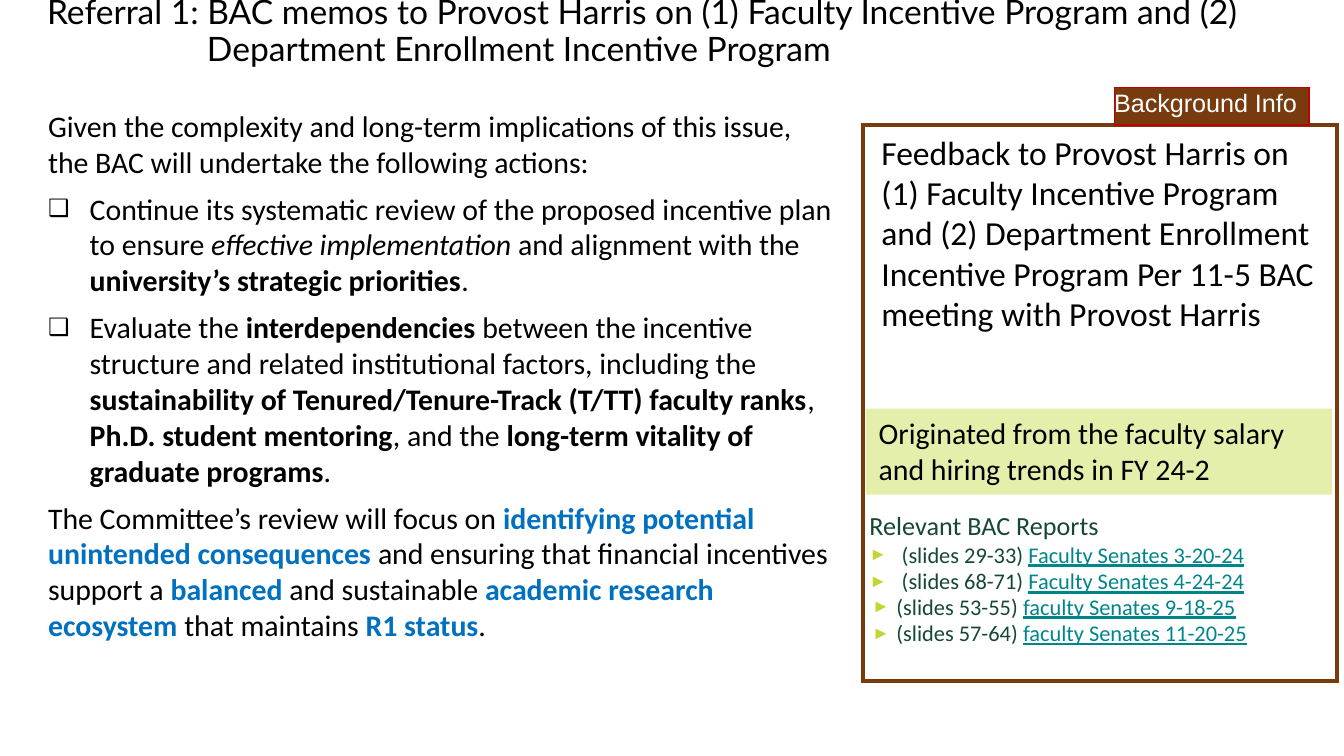
from dataclasses import dataclass, field
from typing import Any, Optional

from lxml import etree
from pptx import Presentation
from pptx.dml.color import RGBColor
from pptx.enum.shapes import MSO_SHAPE
from pptx.enum.text import MSO_ANCHOR, MSO_AUTO_SIZE, PP_ALIGN
from pptx.oxml.ns import qn
from pptx.util import Inches, Pt

RECTANGLE = MSO_SHAPE.RECTANGLE
TOP, MIDDLE = MSO_ANCHOR.TOP, MSO_ANCHOR.MIDDLE
LEFT = PP_ALIGN.LEFT
NO_AUTOFIT = MSO_AUTO_SIZE.NONE

BLACK, WHITE, BROWN, RED = "000000", "FFFFFF", "783B0D", "C00000"
GREEN, LIME, PALE_LIME = "154734", "BFD730", "E5EFAC"
TEAL, BLUE = "00858A", "0070C0"

DEFAULT_INSETS = (0.1, 0.05, 0.1, 0.05)
NO_INSETS = (0, 0, 0, 0)


@dataclass
class Span:
    text: str
    size: float = 16
    color: str = BLACK
    font: str = "Calibri"
    format: dict[str, Any] = field(default_factory=dict)


@dataclass
class Line:
    spans: list[Span]
    margin: float = 0
    indent: float = 0
    bullet: str = ""
    bullet_color: Optional[str] = None
    format: dict[str, Any] = field(default_factory=dict)


@dataclass
class Box:
    left: float
    top: float
    width: float
    height: float
    lines: list[Line] = field(default_factory=list)
    insets: tuple[float, float, float, float] = DEFAULT_INSETS
    anchor: MSO_ANCHOR = TOP
    fill: Optional[str] = None
    border: Optional[str] = None
    border_width: float = 0


def rgb(color: str) -> RGBColor:
    return RGBColor.from_string(color)


def bold(text: str, color: str = BLACK) -> Span:
    return Span(text, color=color, format={"bold": True})


def add_bullet(paragraph, line: Line) -> None:
    properties = paragraph._p.get_or_add_pPr()
    if line.bullet_color:
        color = etree.SubElement(properties, qn("a:buClr"))
        etree.SubElement(color, qn("a:srgbClr"), val=line.bullet_color)
    etree.SubElement(properties, qn("a:buSzPct"), val="80000")
    etree.SubElement(properties, qn("a:buFont"), typeface="Arial")
    etree.SubElement(properties, qn("a:buChar"), char=line.bullet)


def write_line(paragraph, line: Line) -> None:
    for name, value in ({"alignment": LEFT} | line.format).items():
        setattr(paragraph, name, value)
    properties = paragraph._p.get_or_add_pPr()
    properties.set("marL", str(Inches(line.margin)))
    properties.set("indent", str(Inches(line.indent)))
    if line.bullet:
        add_bullet(paragraph, line)
    for span in line.spans:
        run = paragraph.add_run()
        run.text = span.text
        run.font.color.rgb = rgb(span.color)
        settings = {"size": Pt(span.size), "name": span.font} | span.format
        for name, value in settings.items():
            setattr(run.font, name, value)


def write_text(shape, box: Box) -> None:
    frame = shape.text_frame
    left, top, right, bottom = map(Inches, box.insets)
    settings = {
        "word_wrap": True, "auto_size": NO_AUTOFIT, "vertical_anchor": box.anchor,
        "margin_left": left, "margin_top": top,
        "margin_right": right, "margin_bottom": bottom,
    }
    for name, value in settings.items():
        setattr(frame, name, value)
    for index, line in enumerate(box.lines):
        write_line(frame.add_paragraph() if index else frame.paragraphs[0], line)


def bounds(box: Box) -> list[int]:
    return [Inches(value) for value in (box.left, box.top, box.width, box.height)]


def add_text_box(slide, box: Box) -> None:
    write_text(slide.shapes.add_textbox(*bounds(box)), box)


def add_panel(slide, box: Box) -> None:
    shape = slide.shapes.add_shape(RECTANGLE, *bounds(box))
    shape.shadow.inherit = False
    if box.fill:
        shape.fill.solid()
        shape.fill.fore_color.rgb = rgb(box.fill)
    else:
        shape.fill.background()
    if box.border:
        shape.line.color.rgb = rgb(box.border)
        shape.line.width = Pt(box.border_width)
        outline = shape._element.spPr.find(qn("a:ln"))
        etree.SubElement(outline, qn("a:miter"), lim="800000")
    else:
        shape.line.fill.background()
    if box.lines:
        write_text(shape, box)


def place_title(slide, box: Box) -> None:
    """Fill the title, ending it with a line break as tall as its text."""
    title = slide.shapes.title
    title.left, title.top, title.width, title.height = bounds(box)
    write_text(title, box)
    paragraph = title.text_frame.paragraphs[0]
    paragraph.add_line_break()
    size = str(box.lines[0].spans[0].size * 100)
    line_break = paragraph._p.find(qn("a:br"))
    for parent, tag in ((line_break, "a:rPr"), (paragraph._p, "a:endParaRPr")):
        properties = etree.SubElement(parent, qn(tag), sz=size)
        etree.SubElement(properties, qn("a:latin"), typeface="Lato")


def report(slides: str, name: str, margin: float, indent: float) -> Line:
    spans = [Span(f"(slides {slides}) ", 12, GREEN),
             Span(name, 12, TEAL, format={"underline": True})]
    return Line(spans, margin, indent, "►", LIME)


def action(*spans: Span) -> Line:
    return Line(list(spans), 0.31, -0.31, "❑", format={"space_before": Pt(6)})


TITLE = Box(0.35, 0.11, 9.39, 0.56, [Line(
    [Span("Referral 1: BAC memos to Provost Harris on (1) Faculty Incentive Program "
          "and (2) Department Enrollment Incentive Program", 18, font="Lato")],
    1.19, -1.19, format={"line_spacing": 0.9})], NO_INSETS, MIDDLE)

FRAME = Box(6.42, 0.93, 3.53, 4.14, border=BROWN, border_width=2.25)
TAB = Box(8.29, 0.65, 1.45, 0.28,
          [Line([Span("Background Info", 13.5, WHITE, "Arial")])],
          (0, 0, 0, 0.05), fill=BROWN, border=RED, border_width=0.75)
ORIGIN = Box(6.44, 3.04, 3.47, 0.64, [Line([Span(
    "Originated from the faculty salary and hiring trends in FY 24-2")])],
    fill=PALE_LIME)

FEEDBACK = Box(6.46, 0.93, 3.43, 1.92, [Line([Span(
    "Feedback to Provost Harris on (1) Faculty Incentive Program and (2) Department "
    "Enrollment Incentive Program Per 11-5 BAC meeting with Provost Harris", 18)])])
EARLIER_REPORTS = Box(6.46, 3.79, 3.73, 1.17, [
    Line([Span("Relevant BAC Reports", 14, GREEN)], 0.01),
    report("29-33", "Faculty Senates 3-20-24", 0.25, -0.24),
    report("68-71", "Faculty Senates 4-24-24", 0.25, -0.24),
], NO_INSETS)
LATER_REPORTS = Box(6.48, 4.41, 3.63, 0.55, [
    report("53-55", "faculty Senates 9-18-25", 0.19, -0.18),
    report("57-64", "faculty Senates 11-20-25", 0.19, -0.18),
], NO_INSETS)

ACTIONS = Box(0.26, 0.75, 6.07, 4.12, [
    Line([Span("Given the complexity and long-term implications of this issue, "
               "the BAC will undertake the following actions:")]),
    action(Span("Continue its systematic review of the proposed incentive plan to ensure "),
           Span("effective implementation ", format={"italic": True}),
           Span("and alignment with the "),
           bold("university’s strategic priorities"), Span(".")),
    action(Span("Evaluate the "), bold("interdependencies "),
           Span("between the incentive structure and related institutional factors, "
                "including the "),
           bold("sustainability of Tenured/Tenure-Track (T/TT) faculty ranks"),
           Span(", "), bold("Ph.D. student mentoring"), Span(", and the "),
           bold("long-term vitality of graduate programs"), Span(".")),
    Line([Span("The Committee’s review will focus on "),
          bold("identifying potential unintended consequences ", BLUE),
          Span("and ensuring that financial incentives support a "),
          bold("balanced", BLUE), Span(" and sustainable "),
          bold("academic research ecosystem ", BLUE),
          Span("that maintains "), bold("R1 status", BLUE), Span(".")],
         format={"space_before": Pt(6)}),
])


def main() -> None:
    presentation = Presentation()
    presentation.slide_width = Inches(10)
    presentation.slide_height = presentation.slide_width * 9 // 16
    slide = presentation.slides.add_slide(presentation.slide_layouts[5])
    place_title(slide, TITLE)
    for panel in (FRAME, TAB, ORIGIN):
        add_panel(slide, panel)
    for box in (FEEDBACK, EARLIER_REPORTS, LATER_REPORTS, ACTIONS):
        add_text_box(slide, box)
    presentation.save("out.pptx")


if __name__ == "__main__":
    main()
